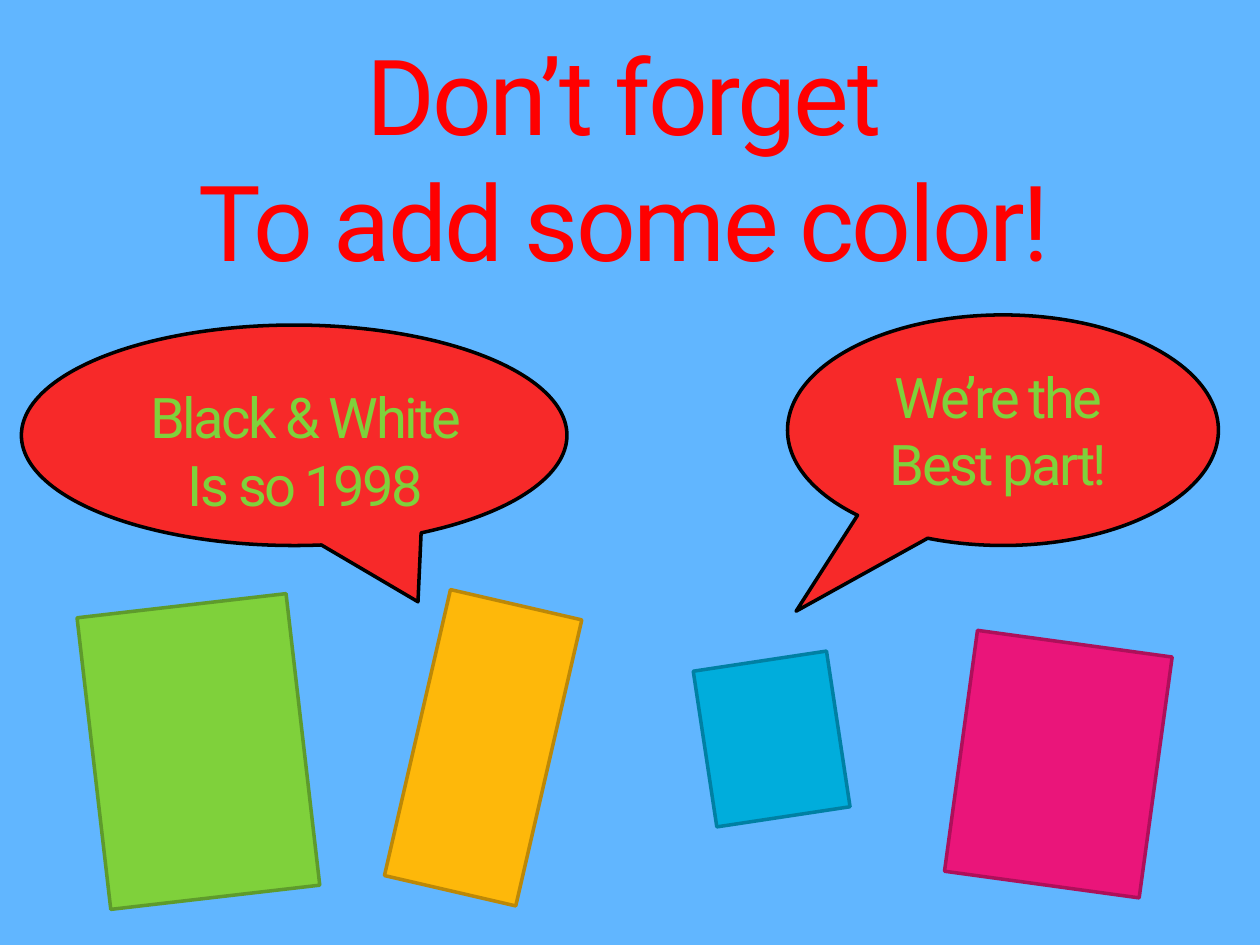
from dataclasses import dataclass

from lxml import etree
from pptx import Presentation
from pptx.dml.color import RGBColor as RGB
from pptx.enum.shapes import MSO_SHAPE as Kind
from pptx.enum.text import MSO_AUTO_SIZE as Fit, PP_ALIGN as Align
from pptx.oxml.ns import qn
from pptx.util import Inches, Pt


@dataclass(frozen=True)
class Theme:
    font: str = "Roboto"
    sky: str = "61B6FF"
    red: str = "FF0000"
    bubble: str = "F72929"
    green: str = "7FD13B"
    black: str = "000000"
    title: int = 60
    speech: int = 32
    edge: int = 2
    outline: float = 1.5
    track: float = -1.5


theme = Theme()
deck = Presentation()
deck.slide_width, deck.slide_height = Inches(10), Inches(7.5)
slide = deck.slides.add_slide(deck.slide_layouts[6])
back = slide.background.fill
back.solid()
back.fore_color.rgb = RGB.from_string(theme.sky)


def add_text(text, box, *, size, color, wrap=True):
    """Add centred, tightly spaced, outlined text, one paragraph per line."""
    frame = slide.shapes.add_textbox(*map(Inches, box)).text_frame
    frame.word_wrap = wrap
    frame.auto_size = Fit.SHAPE_TO_FIT_TEXT
    frame.text = text
    for para in frame.paragraphs:
        para.alignment = Align.CENTER
        run = para.runs[0]
        run.font.name = theme.font
        run.font.size = Pt(size)
        run.font.color.rgb = RGB.from_string(color)
        props = run._r.get_or_add_rPr()
        props.set("spc", str(round(theme.track * 100)))
        line = etree.Element(qn("a:ln"), w=str(Pt(theme.outline)))
        fill = etree.SubElement(line, qn("a:solidFill"))
        etree.SubElement(fill, qn("a:srgbClr"), val=theme.black)
        props.insert(0, line)


def add_block(kind, box, fill, edge):
    block = slide.shapes.add_shape(kind, *map(Inches, box))
    block.shadow.inherit = False
    block.fill.solid()
    block.fill.fore_color.rgb = RGB.from_string(fill)
    block.line.color.rgb = RGB.from_string(edge)
    block.line.width = Pt(theme.edge)
    return block


add_text("Don’t forget\nTo add some color!", (0.29, 0.19, 9.32, 2.12),
         size=theme.title, color=theme.red, wrap=False)

cards = [
    ((0.74, 4.8, 1.67, 2.33), -6.6, theme.green, "5E9B2C"),
    ((3.3, 4.77, 1.07, 2.33), 13, "FEB80A", "BC8807"),
    ((5.59, 5.24, 1.07, 1.25), -8.6, "00ADDC", "0080A3"),
    ((7.62, 5.1, 1.56, 1.93), 7.8, "EA157A", "AD105A"),
]
for box, turn, fill, edge in cards:
    add_block(Kind.RECTANGLE, box, fill, edge).rotation = turn

# Bubble box, tail tip as a share of its size, words and their box
bubbles = [
    ((6.25, 2.5, 3.42, 1.83), (-0.48, 0.785),
     "We’re the\nBest part!", (6.02, 2.83, 3.81, 1.18)),
    ((0.17, 2.58, 4.33, 1.75), (0.227, 0.755),
     "Black & White\nIs so 1998", (0.52, 2.99, 3.81, 1.18)),
]
for box, tail, words, place in bubbles:
    bubble = add_block(Kind.OVAL_CALLOUT, box, theme.bubble, theme.black)
    for i, share in enumerate(tail):
        bubble.adjustments[i] = share
    add_text(words, place, size=theme.speech, color=theme.green)

deck.save("out.pptx")
